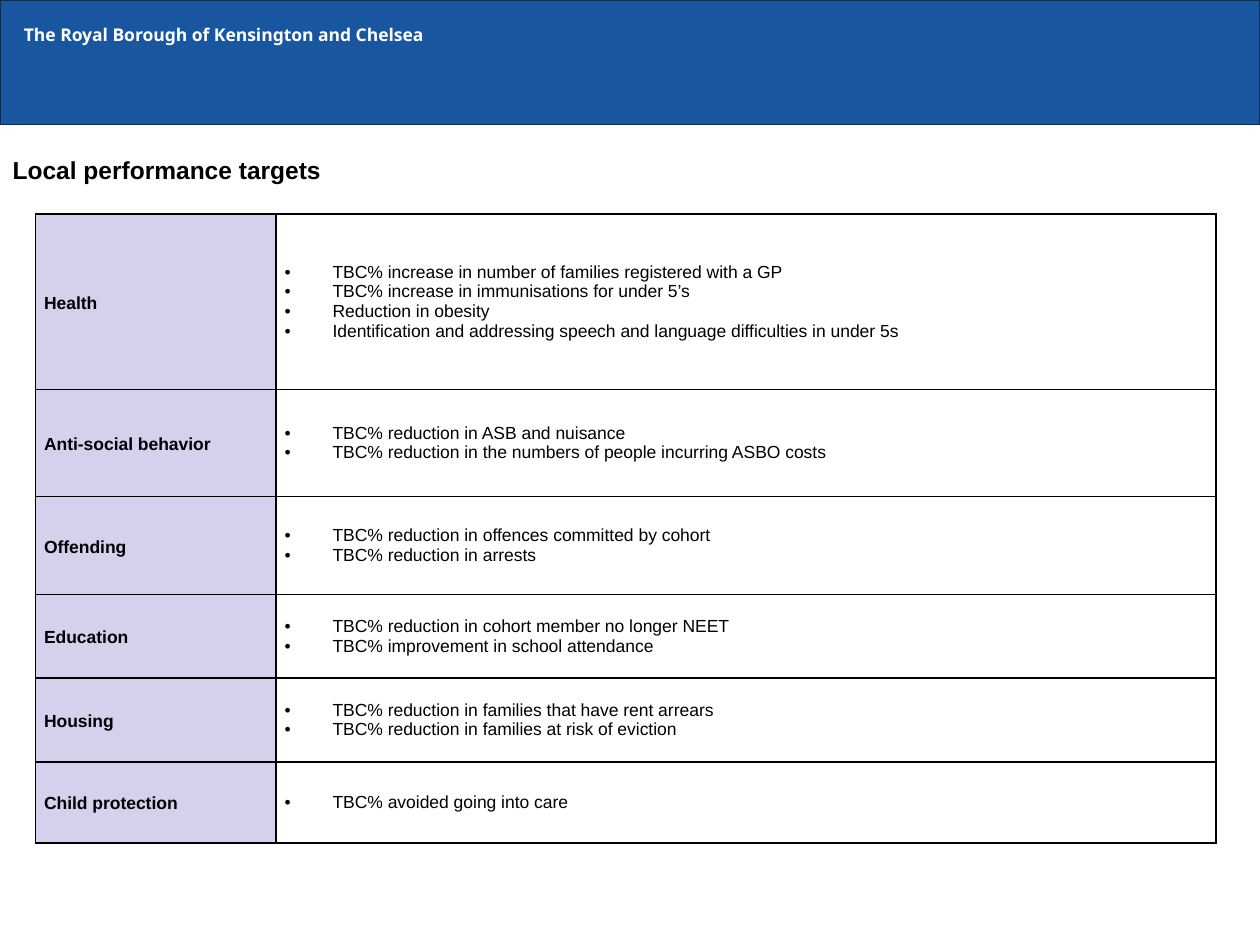
"""Build the local performance targets slide."""
from lxml.etree import SubElement
from pptx import Presentation
from pptx.dml.color import RGBColor
from pptx.enum.shapes import MSO_SHAPE
from pptx.enum.text import MSO_ANCHOR, PP_ALIGN
from pptx.oxml.ns import qn
from pptx.util import Inches, Pt

THEME = {
    "band": RGBColor.from_string("1856A0"),
    "edge": RGBColor.from_string("0B2F4D"),
    "label": RGBColor.from_string("D3D1EC"),
    "ink": RGBColor.from_string("000000"),
    "paper": RGBColor.from_string("FFFFFF"),
    "text": {"name": "Arial", "size": Pt(10), "bold": False},
    "strong": {"name": "Arial", "size": Pt(10), "bold": True},
    "head": {"name": "Arial", "size": Pt(14), "bold": True},
    "brand": {"name": "Noto Sans", "size": Pt(10), "bold": True},
}
TARGETS = [
    ("Health", 1.39, [
        "TBC% increase in number of families registered with a GP",
        "TBC% increase in immunisations for under 5’s",
        "Reduction in obesity",
        "Identification and addressing speech and language difficulties in under 5s"]),
    ("Anti-social behavior", 0.85, [
        "TBC% reduction in ASB and nuisance",
        "TBC% reduction in the numbers of people incurring ASBO costs"]),
    ("Offending", 0.78, [
        "TBC% reduction in offences committed by cohort",
        "TBC% reduction in arrests"]),
    ("Education", 0.66, [
        "TBC% reduction in cohort member no longer NEET",
        "TBC% improvement in school attendance"]),
    ("Housing", 0.67, [
        "TBC% reduction in families that have rent arrears",
        "TBC% reduction in families at risk of eviction"]),
    ("Child protection", 0.64, ["TBC% avoided going into care"]),
]
COLS = [1.91, 7.46]
INSET = Inches(0.07)


def write(frame, lines, style, color="ink"):
    for i, line in enumerate(lines):
        para = frame.paragraphs[0] if i == 0 else frame.add_paragraph()
        para.alignment = PP_ALIGN.LEFT
        run = para.add_run()
        run.text = line
        for key, value in THEME[style].items():
            setattr(run.font, key, value)
        run.font.color.rgb = THEME[color]


def frame_cell(cell):
    form = {"margin_left": INSET, "margin_right": INSET, "margin_top": 0,
            "margin_bottom": 0, "vertical_anchor": MSO_ANCHOR.MIDDLE}
    for key, value in form.items():
        setattr(cell, key, value)
    props = cell._tc.get_or_add_tcPr()
    for side in ("a:lnL", "a:lnR", "a:lnT", "a:lnB"):
        line = SubElement(props, qn(side), w=str(Pt(1)))
        fill = SubElement(line, qn("a:solidFill"))
        SubElement(fill, qn("a:srgbClr"), val=str(THEME["ink"]))


deck = Presentation()
deck.slide_width, deck.slide_height = Inches(10), Inches(7.5)
wide, high = deck.slide_width, deck.slide_height
slide = deck.slides.add_slide(deck.slide_layouts[5])

band = slide.shapes.add_shape(MSO_SHAPE.RECTANGLE, 0, 0, wide, Inches(0.99))
band.shadow.inherit = False
band.fill.solid()
band.fill.fore_color.rgb = THEME["band"]
band.line.color.rgb = THEME["edge"]
band.line.width = Pt(0.75)
form = {"margin_left": Inches(0.19), "margin_top": Inches(0.19),
        "vertical_anchor": MSO_ANCHOR.TOP, "word_wrap": True}
for key, value in form.items():
    setattr(band.text_frame, key, value)
write(band.text_frame, ["The Royal Borough of Kensington and Chelsea"], "brand", "paper")

grid = slide.shapes.add_table(len(TARGETS), len(COLS), Inches(0.28), Inches(1.7),
                              Inches(sum(COLS)), Inches(sum(row[1] for row in TARGETS)))
table = grid.table
table.first_row = table.horz_banding = False
for col, size in zip(table.columns, COLS):
    col.width = Inches(size)
for row, (name, size, goals) in zip(table.rows, TARGETS):
    row.height = Inches(size)
    label, body = row.cells
    for cell in (label, body):
        frame_cell(cell)
    label.fill.solid()
    label.fill.fore_color.rgb = THEME["label"]
    write(label.text_frame, [name], "strong")
    label.text_frame.paragraphs[0].line_spacing = 1.15
    label.text_frame.paragraphs[0].space_after = Pt(10)
    body.fill.background()
    write(body.text_frame, goals, "text")
    for para in body.text_frame.paragraphs:
        props = para._p.get_or_add_pPr()
        props.set("marL", str(Inches(0.38)))
        props.set("indent", str(-Inches(0.38)))
        SubElement(props, qn("a:buFont"), typeface="Arial")
        SubElement(props, qn("a:buChar"), char="•")

title = slide.shapes.title
spot = {"left": 0, "top": Inches(1.18), "width": wide, "height": int(high * 0.045)}
for key, value in spot.items():
    setattr(title, key, value)
title.text_frame.vertical_anchor = MSO_ANCHOR.MIDDLE
write(title.text_frame, ["Local performance targets"], "head")

deck.save("out.pptx")
